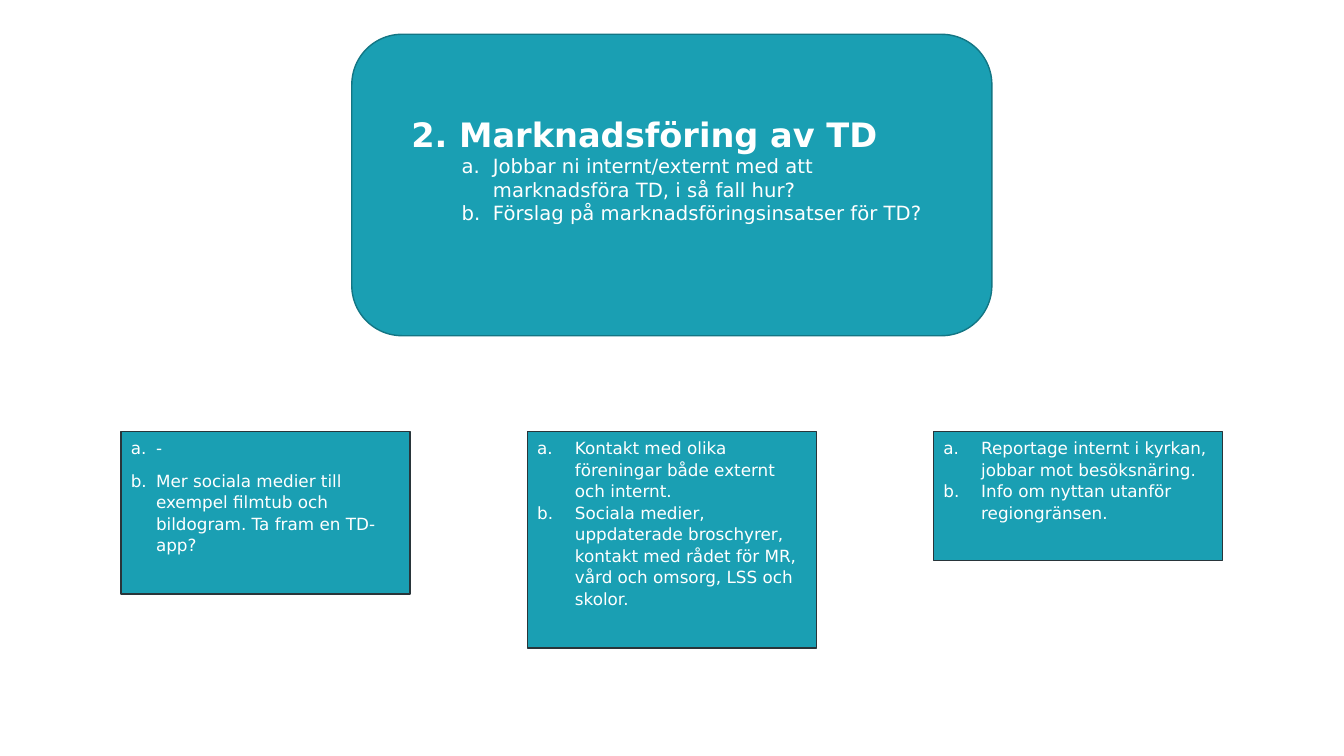
"""Build the slide about marketing TD, with a question panel and three answer boxes."""
from dataclasses import dataclass

import pptx
import pptx.dml.color
import pptx.enum.shapes
import pptx.enum.text
import pptx.oxml.ns
import pptx.util
from lxml import etree

Pt = pptx.util.Pt
RGBColor = pptx.dml.color.RGBColor
MSO_SHAPE = pptx.enum.shapes.MSO_SHAPE

TEAL = RGBColor(0x1A, 0x9F, 0xB3)
DARK_TEAL = RGBColor(0x13, 0x76, 0x84)
SLATE = RGBColor(0x29, 0x35, 0x3A)
WHITE = RGBColor(0xFF, 0xFF, 0xFF)
FONT = "DejaVu Sans"

BOX_LEFT, BOX_TOP, BOX_WIDTH, BOX_STEP = 86.4, 308.2, 206.6, 290.2


@dataclass(frozen=True)
class AnswerBox:
    answers: tuple[str, str]
    height: float
    indent: float
    first_gap: float = 0


ANSWER_BOXES = (
    AnswerBox(("-", "Mer sociala medier till exempel filmtub och bildogram. Ta fram en TD-app?"),
              116, 18, first_gap=8),
    AnswerBox(("Kontakt med olika föreningar både externt och internt.",
               "Sociala medier, uppdaterade broschyrer, kontakt med rådet för MR, "
               "vård och omsorg, LSS och skolor."), 154.8, 27),
    AnswerBox(("Reportage internt i kyrkan, jobbar mot besöksnäring.",
               "Info om nyttan utanför regiongränsen."), 92.2, 27),
)
QUESTIONS = (
    "Jobbar ni internt/externt med att marknadsföra TD, i så fall hur?",
    "Förslag på marknadsföringsinsatser för TD?",
)


def add_panel(slide, kind, left: float, top: float, width: float, height: float,
              outline: RGBColor):
    panel = slide.shapes.add_shape(kind, Pt(left), Pt(top), Pt(width), Pt(height))
    panel.shadow.inherit = False
    panel.fill.solid()
    panel.fill.fore_color.rgb = TEAL
    panel.line.color.rgb = outline
    panel.line.width = Pt(1)
    return panel


def write(paragraph, text: str, *, size: float, bold: bool = False, level: int = 0,
          margin: float = 0, hanging: float = 0, lettered: bool = False,
          spacing: float = 1.0, after: float = 0) -> None:
    paragraph.alignment = pptx.enum.text.PP_ALIGN.LEFT
    paragraph.level = level
    paragraph.line_spacing = spacing
    paragraph.space_before = Pt(0)
    paragraph.space_after = Pt(after)
    run = paragraph.add_run()
    run.text = text
    run.font.name = FONT
    run.font.size = Pt(size)
    run.font.bold = bold
    run.font.color.rgb = WHITE
    properties = paragraph._p.get_or_add_pPr()
    properties.set("marL", str(Pt(margin)))
    properties.set("indent", str(-Pt(hanging)))
    if lettered:
        etree.SubElement(properties, pptx.oxml.ns.qn("a:buFont"), typeface="+mj-lt")
        etree.SubElement(properties, pptx.oxml.ns.qn("a:buAutoNum"), type="alphaLcPeriod")


def prepare_frame(frame) -> None:
    frame.word_wrap = True
    frame.auto_size = pptx.enum.text.MSO_AUTO_SIZE.NONE
    frame.vertical_anchor = pptx.enum.text.MSO_ANCHOR.TOP


def add_heading(slide) -> None:
    add_panel(slide, MSO_SHAPE.ROUNDED_RECTANGLE, 251.3, 24.5, 457.2, 215.3, DARK_TEAL)
    heading = slide.shapes.title
    heading.element.getparent().append(heading.element)
    heading.left, heading.top = Pt(286.6), Pt(77.8)
    heading.width, heading.height = Pt(399.6), Pt(87.1)
    frame = heading.text_frame
    prepare_frame(frame)
    write(frame.paragraphs[0], "2. Marknadsföring av TD", size=24, bold=True)
    for question in QUESTIONS:
        write(frame.add_paragraph(), question, size=14, level=1,
              margin=58.3, hanging=22.3, lettered=True)


def add_answers(slide, column: int, box: AnswerBox) -> None:
    panel = add_panel(slide, MSO_SHAPE.RECTANGLE, BOX_LEFT + column * BOX_STEP, BOX_TOP,
                      BOX_WIDTH, box.height, SLATE)
    frame = panel.text_frame
    prepare_frame(frame)
    first, second = box.answers
    write(frame.paragraphs[0], first, size=12, margin=box.indent, hanging=box.indent,
          lettered=True, spacing=1.07, after=box.first_gap)
    write(frame.add_paragraph(), second, size=12, margin=box.indent, hanging=box.indent,
          lettered=True, spacing=1.07, after=8)


def main() -> None:
    deck = pptx.Presentation()
    deck.slide_width, deck.slide_height = Pt(960), Pt(540)
    slide = deck.slides.add_slide(deck.slide_layouts.get_by_name("Title Only"))
    add_heading(slide)
    for column, box in enumerate(ANSWER_BOXES):
        add_answers(slide, column, box)
    deck.save("out.pptx")


if __name__ == "__main__":
    main()
